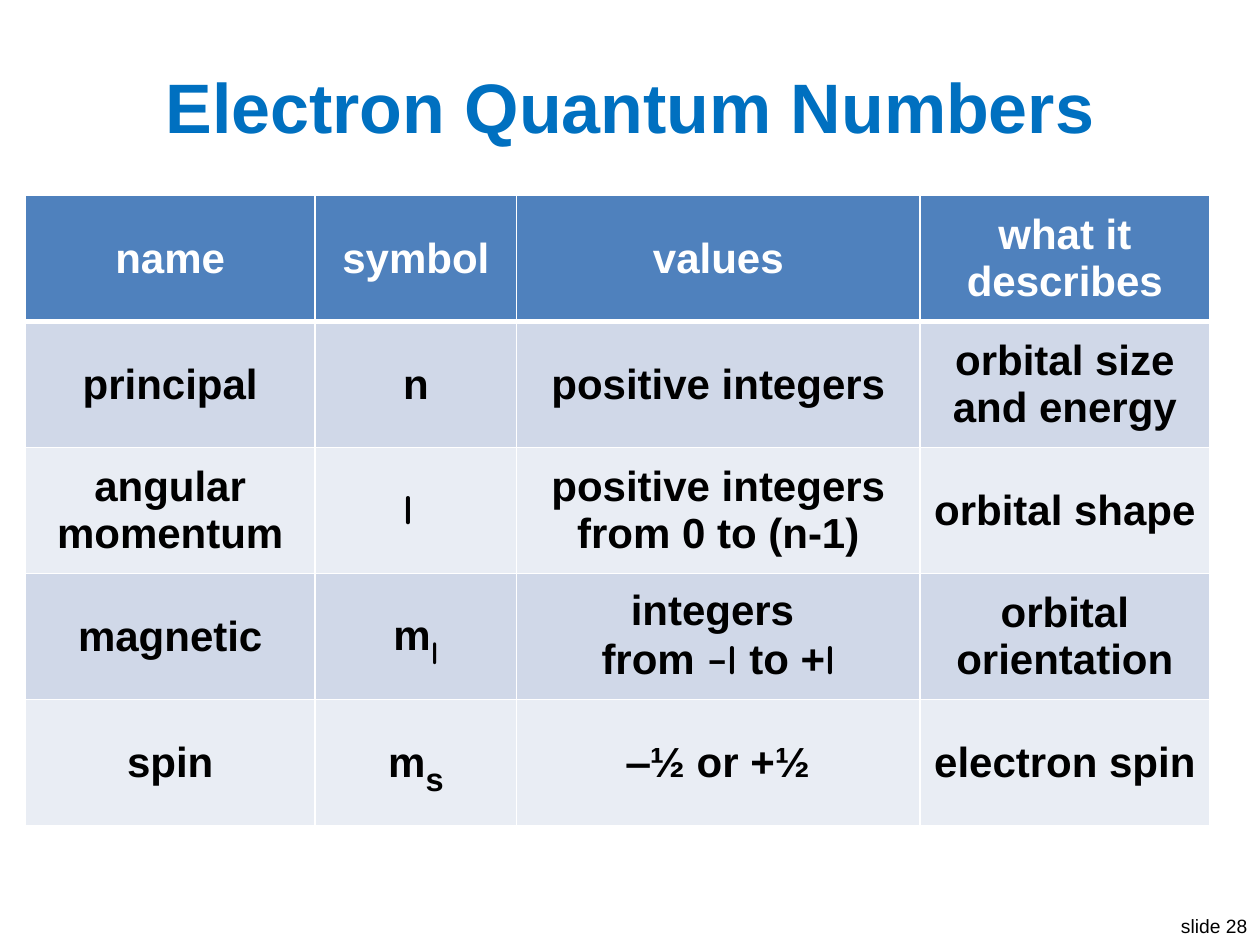
from lxml.etree import SubElement
from pptx import Presentation
from pptx.dml.color import RGBColor
from pptx.enum.text import MSO_ANCHOR as Anchor, PP_ALIGN as Align
from pptx.oxml import parse_xml
from pptx.oxml.ns import qn
from pptx.util import Cm, Pt

SANS, HAND = "Arial", "Comic Neue"
WHITE, BLACK = "FFFFFF", "000000"
HEAD, BANDS = "4F81BD", ("D0D8E8", "E9EDF4")
NS = "http://schemas.openxmlformats.org/drawingml/2006/main"

# A cell is a list of lines; a line is a list of runs (text, font, is_sub)
ELL = ("l", HAND)
ROWS = [
    ["name", "symbol", "values", "what it describes"],
    ["principal", "n", "positive integers", "orbital size and energy"],
    ["angular momentum", [[("l ", HAND)]],
     "positive integers from 0 to (n-1)", "orbital shape"],
    ["magnetic", [[("m",), ("l", HAND, True)]],
     [[("integers ",)],
      [("from ",), ("‒", "Calibri"), ELL, (" to +",), ELL]],
     "orbital orientation"],
    ["spin", [[("m",), ("s", SANS, True)]], "‒½ or +½", "electron spin"],
]


def rgb(code):
    return RGBColor.from_string(code)


def add_run(para, text, size, color, bold=False, font=SANS, sub=False):
    run = para.add_run()
    run.text = text
    face = run.font
    face.name, face.size, face.bold = font, Pt(size), bold
    face.color.rgb = rgb(color)
    if sub:
        face._element.set("baseline", "-25000")


def place(shape, box):
    shape.left, shape.top, shape.width, shape.height = map(Cm, box)


def add_title(slide, box):
    title = slide.shapes.title
    place(title, box)
    frame = title.text_frame
    frame.vertical_anchor = Anchor.MIDDLE
    para = frame.paragraphs[0]
    para.alignment = Align.CENTER
    add_run(para, "Electron Quantum Numbers", 40, "0070C0", True)


def add_edges(cell, low):
    """White borders; the bottom one is low points wide."""
    props = cell._tc.get_or_add_tcPr()
    for i, (side, width) in enumerate(
            [("L", 1), ("R", 1), ("T", 1), ("B", low)]):
        line = parse_xml(f'<a:ln{side} xmlns:a="{NS}" w="{Pt(width)}"/>')
        fill = SubElement(line, qn("a:solidFill"))
        SubElement(fill, qn("a:srgbClr"), val=WHITE)
        props.insert(i, line)


def fill_cell(cell, lines, back, color, low):
    cell.fill.solid()
    cell.fill.fore_color.rgb = rgb(back)
    cell.vertical_anchor = Anchor.MIDDLE
    add_edges(cell, low)
    if isinstance(lines, str):
        lines = [[(lines,)]]
    frame = cell.text_frame
    for i, line in enumerate(lines):
        para = frame.add_paragraph() if i else frame.paragraphs[0]
        para.alignment = Align.CENTER
        for text, font, sub in (run + (SANS, False)[len(run) - 1:]
                                for run in line):
            add_run(para, text, 32 if sub else 24, color, True, font, sub)


def add_grid(slide, box, shares):
    table = slide.shapes.add_table(
        len(ROWS), len(shares), *map(Cm, box)).table
    for col, share in zip(table.columns, shares):
        col.width = Cm(box[2] * share / sum(shares))
    for r, row in enumerate(ROWS):
        # Header row first, then alternating bands
        look = (BANDS[(r - 1) % 2], BLACK, 1) if r else (HEAD, WHITE, 3)
        for c, lines in enumerate(row):
            # The header's thick rule is also the top of the row below
            fill_cell(table.cell(r, c), lines, *look)
            if r == 1:
                edge = table.cell(r, c)._tc.tcPr.find(qn("a:lnT"))
                edge.set("w", str(Pt(3)))


def add_count(slide, box):
    label = slide.shapes.add_textbox(*map(Cm, box))
    frame = label.text_frame
    frame.word_wrap = False
    para = frame.paragraphs[0]
    para.alignment = Align.RIGHT
    add_run(para, "slide 28", 11, BLACK)


def main():
    deck = Presentation()
    deck.slide_width, deck.slide_height = Cm(25.4), Cm(19.05)
    slide = deck.slides.add_slide(deck.slide_layouts[5])
    add_count(slide, (23.5, 18.31, 1.9, 0.74))
    add_title(slide, (0.51, 1.12, 24.38, 2.03))
    add_grid(slide, (0.51, 3.94, 23.88, 12.7), (23, 16, 32, 23))
    deck.save("out.pptx")


if __name__ == "__main__":
    main()
